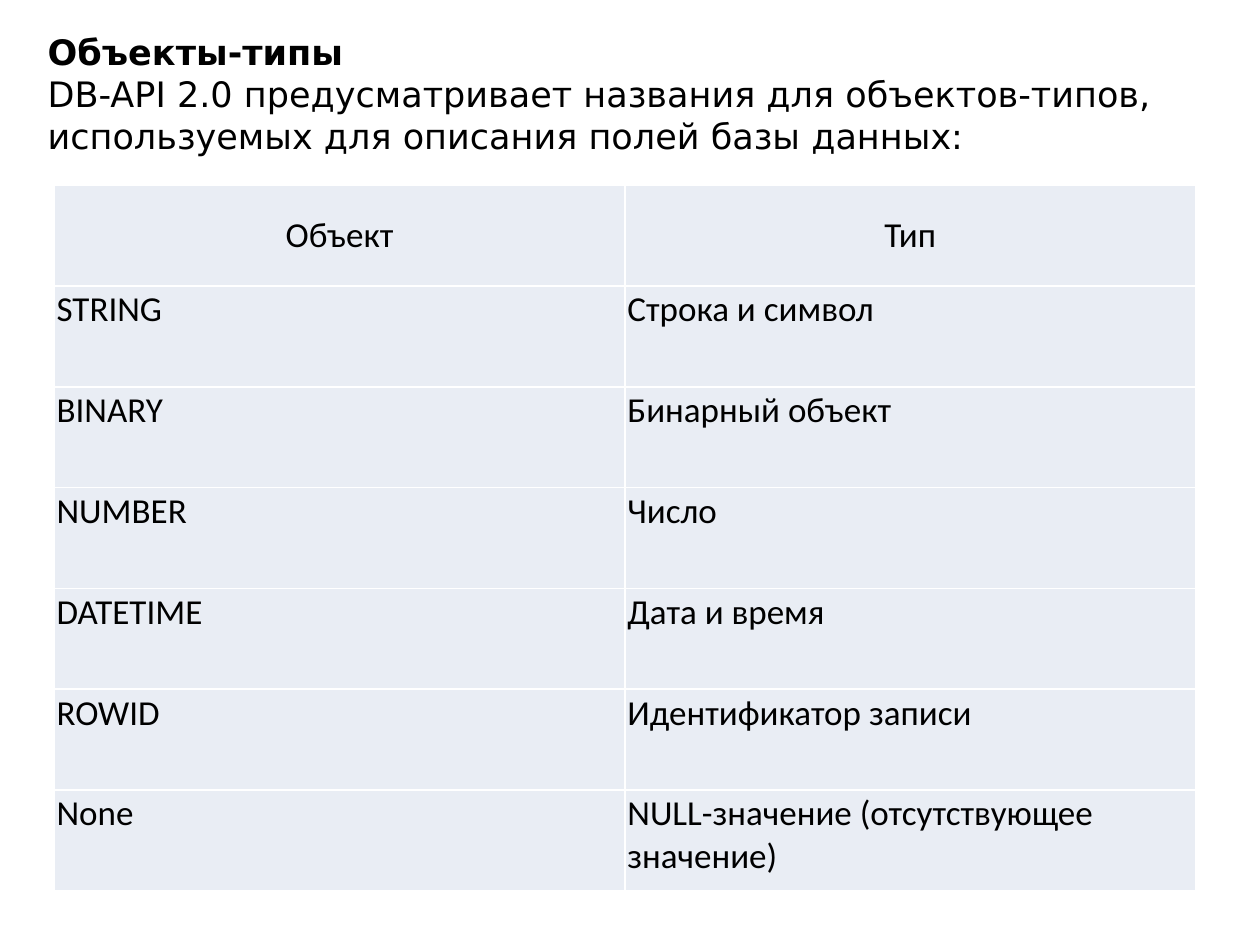
from typing import NamedTuple

from lxml.etree import SubElement
from pptx import Presentation
from pptx.dml.color import RGBColor
from pptx.enum.text import MSO_ANCHOR as Anchor, PP_ALIGN as Align
from pptx.oxml.ns import qn
from pptx.util import Inches, Pt

BLACK, WHITE, CELL_FILL = "000000", "FFFFFF", "E9EDF4"
ROW_HEIGHT, COL_WIDTH = 0.8, 4.53


class TypeRow(NamedTuple):
    name: str
    meaning: str


HEADER = TypeRow("Объект", "Тип")
TYPES = [
    TypeRow("STRING", "Строка и символ"),
    TypeRow("BINARY", "Бинарный объект"),
    TypeRow("NUMBER", "Число"),
    TypeRow("DATETIME", "Дата и время"),
    TypeRow("ROWID", "Идентификатор записи"),
    TypeRow("None", "NULL-значение (отсутствующее значение)"),
]


def rgb(color: str) -> RGBColor:
    return RGBColor.from_string(color)


def write(p, text: str, *, font="Calibri", size=20, color=BLACK, bold=False, align=Align.LEFT):
    p.alignment = align
    r = p.add_run()
    r.text = text
    r.font.name, r.font.size, r.font.bold = font, Pt(size), bold
    r.font.color.rgb = rgb(color)


def set_margins(frame, left: float, top: float, right: float, bottom: float):
    frame.margin_left, frame.margin_top = Inches(left), Inches(top)
    frame.margin_right, frame.margin_bottom = Inches(right), Inches(bottom)


def add_borders(cell, color: str, width: float):
    tc_pr = cell._tc.get_or_add_tcPr()
    for side in ("a:lnL", "a:lnR", "a:lnT", "a:lnB"):
        ln = SubElement(tc_pr, qn(side), w=str(Pt(width)))
        SubElement(SubElement(ln, qn("a:solidFill")), qn("a:srgbClr"), val=color)


def add_heading(s):
    tf = s.shapes.add_textbox(Inches(0.28), Inches(0.19), Inches(9.37), Inches(1.06)).text_frame
    tf.word_wrap = True
    tf.vertical_anchor = Anchor.MIDDLE
    set_margins(tf, 0.1, 0.05, 0.1, 0)
    write(tf.paragraphs[0], "Объекты-типы", font="DejaVu Sans", bold=True)
    write(tf.add_paragraph(),
          "DB-API 2.0 предусматривает названия для объектов-типов, "
          "используемых для описания полей базы данных:", font="DejaVu Sans")


def add_type_table(s, rows: list[TypeRow]):
    n_cols = len(HEADER)
    table = s.shapes.add_table(len(rows), n_cols, Inches(0.43), Inches(1.47),
                               Inches(COL_WIDTH * n_cols), Inches(ROW_HEIGHT * len(rows))).table
    table.horz_banding = False
    for col in table.columns:
        col.width = Inches(COL_WIDTH)
    for i, row in enumerate(rows):
        table.rows[i].height = Inches(ROW_HEIGHT)
        is_header = row is HEADER
        for j, text in enumerate(row):
            cell = table.cell(i, j)
            set_margins(cell, 0.02, 0.02, 0.02, 0.02)
            cell.vertical_anchor = Anchor.MIDDLE if is_header else Anchor.TOP
            add_borders(cell, WHITE, 1)
            cell.fill.solid()
            cell.fill.fore_color.rgb = rgb(CELL_FILL)
            write(cell.text_frame.paragraphs[0], text,
                  align=Align.CENTER if is_header else Align.LEFT)


def main():
    prs = Presentation()
    prs.slide_width, prs.slide_height = Inches(10), Inches(7.5)
    s = prs.slides.add_slide(prs.slide_layouts[6])
    add_type_table(s, [HEADER, *TYPES])
    add_heading(s)
    prs.save("out.pptx")


if __name__ == "__main__":
    main()
